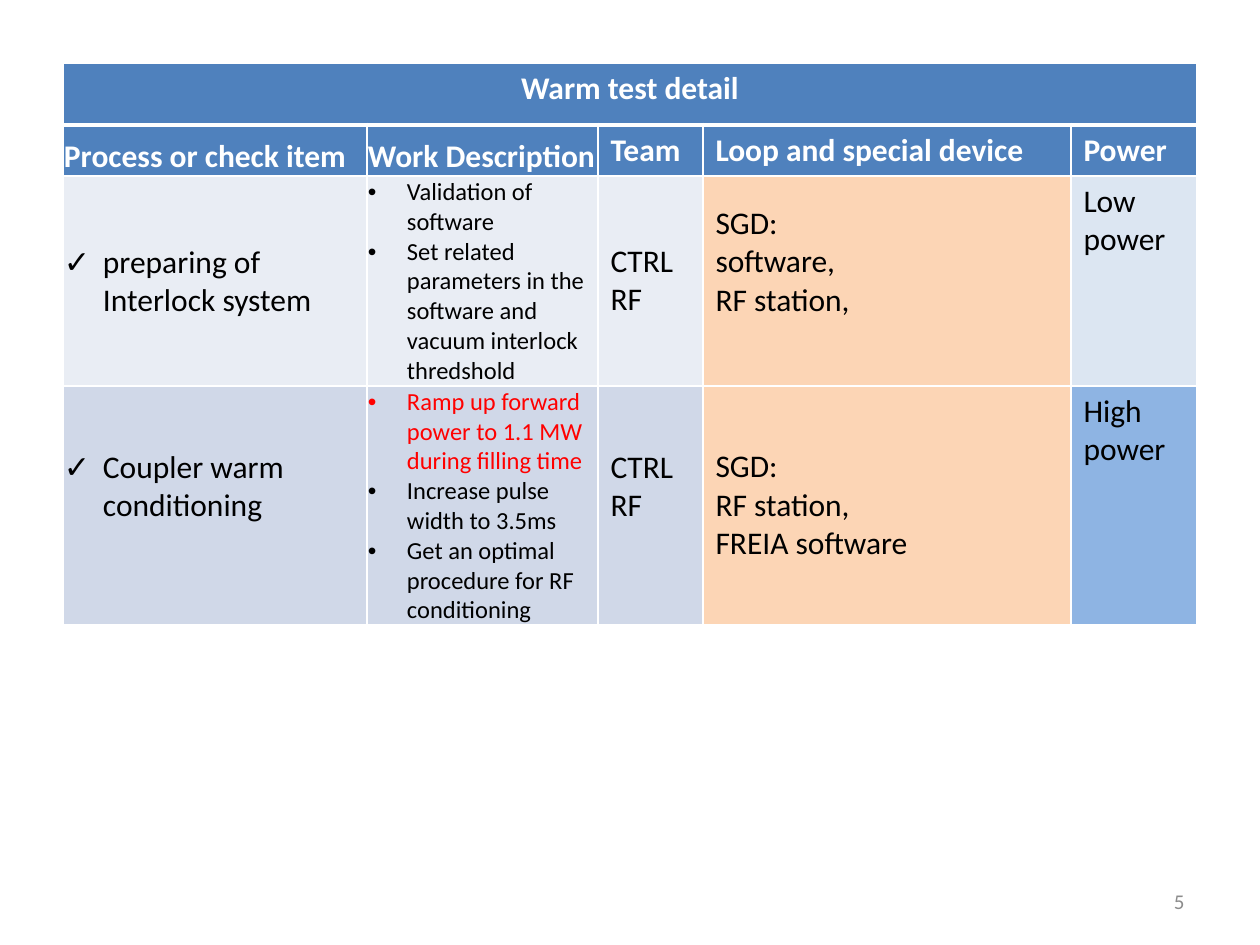
import pptx
import pptx.util
import pptx.dml.color
import pptx.enum.text
from lxml import etree

TITLE = "Warm test detail"
HEADS = ["Process or check item", "Work Description", "Team",
         "Loop and special device", "Power"]
ROWS = [
    [["preparing of Interlock system"],
     ["Validation of software",
      "Set related parameters in the software and vacuum interlock thredshold"],
     ["CTRL", "RF"],
     ["SGD:", "software,", "RF station,"],
     ["Low", "power"]],
    [["Coupler warm conditioning"],
     ["Ramp up forward power to 1.1 MW during filling time",
      "Increase pulse width to 3.5ms",
      "Get an optimal procedure for RF conditioning"],
     ["CTRL", "RF"],
     ["SGD:", "RF station,", "FREIA software"],
     ["High", "power"]],
]
HOT = ROWS[1][1][0]
PAGE = "5"

# Lengths in px, 126 to the inch
WIDTHS = [304, 231, 105, 368, 126]
HEIGHTS = [62, 51, 210, 239]
LEFT = TOP = 63
INDENT = 39
LINE = 38  # space kept free below raised text
RAISED = {(0, 3), (1, 0), (1, 2)}  # (body row, column)

BLUE, WHITE, BLACK, RED, GREY = "4F81BD", "FFFFFF", "000000", "FF0000", "8C8C8C"
FILLS = [["E9EDF4"] * 3 + ["FCD5B5", "DCE6F2"],
         ["D0D8E8"] * 3 + ["FCD5B5", "8EB4E3"]]
MARKS = {0: "✓", 1: "•"}
SIZES = {1: 14}

ALIGN = pptx.enum.text.PP_ALIGN
ANCHOR = pptx.enum.text.MSO_ANCHOR


def px(n):
    return round(n * 914400 / 126)


def color(code):
    return pptx.dml.color.RGBColor.from_string(code)


def add(parent, tag, **attrs):
    node = etree.SubElement(parent, pptx.oxml.ns.qn("a:" + tag))
    for key, val in attrs.items():
        node.set(key, str(val))
    return node


def write(frame, lines, size, ink, bold=False, align=ALIGN.LEFT, mark=None):
    for i, line in enumerate(lines):
        para = frame.paragraphs[0] if i == 0 else frame.add_paragraph()
        para.text = line
        para.alignment = align
        font = para.font
        font.name, font.size, font.bold = "Calibri", pptx.util.Pt(size), bold
        font.color.rgb = color(RED if line == HOT else ink)
        if mark:
            props = para.runs[0].font and para._p.get_or_add_pPr()
            props.set("marL", str(px(INDENT)))
            props.set("indent", str(-px(INDENT)))
            face = add(props, "buFont", typeface="Arial")
            char = add(props, "buChar", char=mark)
            # Bullets come before the default run properties
            base = props.find(pptx.oxml.ns.qn("a:defRPr"))
            if base is not None:
                base.addprevious(face)
                base.addprevious(char)


def edge(cell, row):
    props = cell._tc.get_or_add_tcPr()
    for side in "LRTB":
        thick = (row, side) in {(0, "B"), (1, "T")}
        line = add(props, "ln" + side, w=pptx.util.Pt(3 if thick else 1))
        add(add(line, "solidFill"), "srgbClr", val=WHITE)


def paint(cell, fill, anchor):
    cell.fill.solid()
    cell.fill.fore_color.rgb = color(fill)
    cell.vertical_anchor = anchor


def tight(cell):
    cell.margin_left = cell.margin_right = cell.margin_top = px(1)
    cell.margin_bottom = 0


def main():
    deck = pptx.Presentation()
    deck.slide_width, deck.slide_height = px(1260), px(945)
    slide = deck.slides.add_slide(deck.slide_layouts[6])

    # Page number
    box = slide.shapes.add_textbox(px(903), px(876), px(294), px(50))
    box.text_frame.word_wrap = True
    box.text_frame.vertical_anchor = ANCHOR.MIDDLE
    write(box.text_frame, [PAGE], 12, GREY, align=ALIGN.RIGHT)

    # Table grid
    table = slide.shapes.add_table(
        len(HEIGHTS), len(WIDTHS), px(LEFT), px(TOP),
        px(sum(WIDTHS)), px(sum(HEIGHTS))).table
    for col, wide in zip(table.columns, WIDTHS):
        col.width = px(wide)
    for r, high in enumerate(HEIGHTS):
        table.rows[r].height = px(high)
        for c in range(len(WIDTHS)):
            edge(table.cell(r, c), r)

    # Title row
    first = table.cell(0, 0)
    first.merge(table.cell(0, len(WIDTHS) - 1))
    paint(first, BLUE, ANCHOR.TOP)
    write(first.text_frame, [TITLE], 18, WHITE, True, ALIGN.CENTER)

    # Column heads
    for c, head in enumerate(HEADS):
        cell = table.cell(1, c)
        paint(cell, BLUE, ANCHOR.BOTTOM if c in MARKS else ANCHOR.TOP)
        if c in MARKS:
            tight(cell)
        write(cell.text_frame, [head], 18, WHITE, True)

    # Body
    for r, row in enumerate(ROWS):
        for c, lines in enumerate(row):
            cell = table.cell(r + 2, c)
            paint(cell, FILLS[r][c], ANCHOR.TOP if c == 4 else ANCHOR.MIDDLE)
            if c in MARKS:
                tight(cell)
            if (r, c) in RAISED:
                cell.margin_bottom += px(LINE)
            write(cell.text_frame, lines, SIZES.get(c, 18), BLACK,
                  mark=MARKS.get(c))

    deck.save("out.pptx")


if __name__ == "__main__":
    main()
